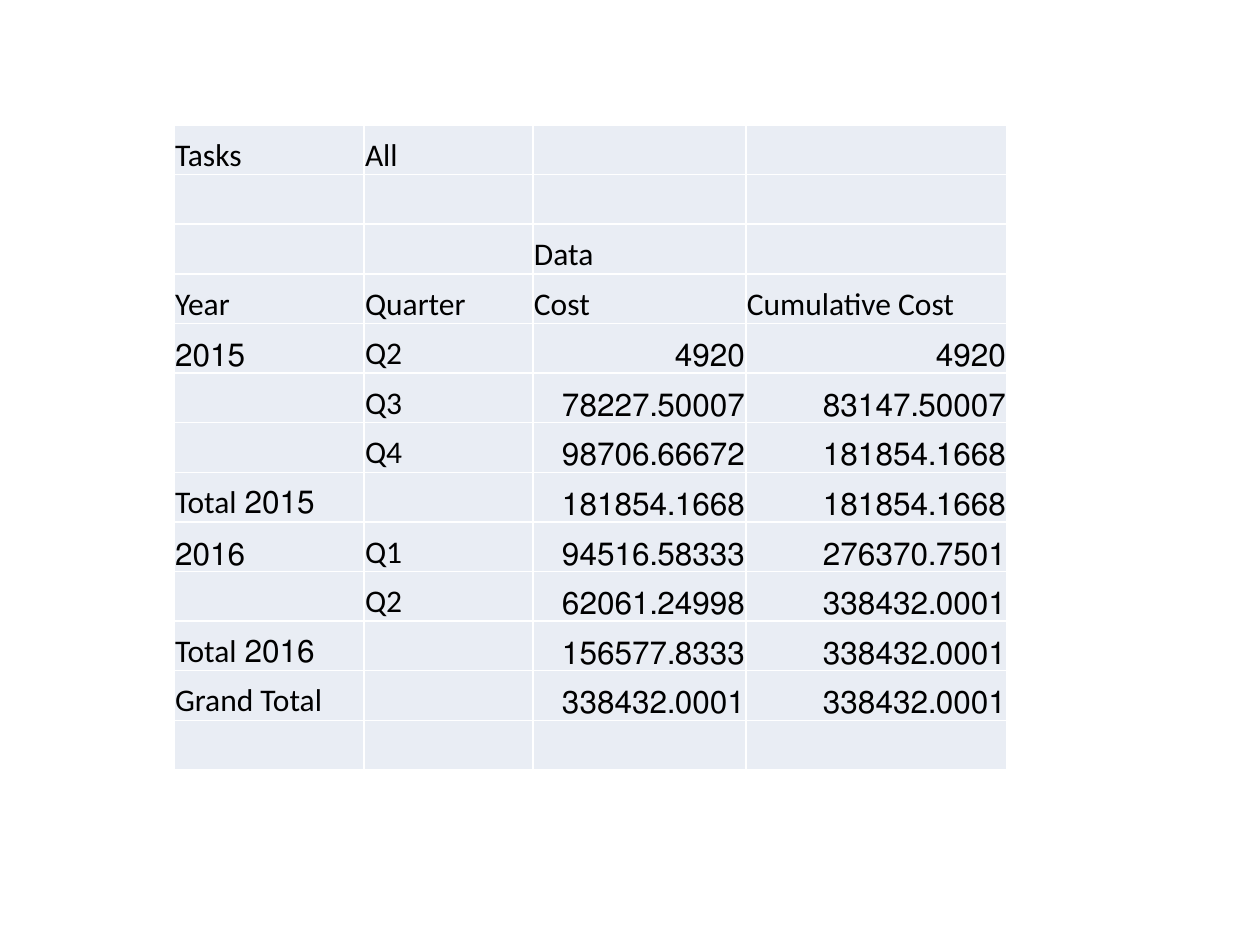
from lxml.etree import SubElement
from pptx import Presentation
from pptx.dml.color import RGBColor as Rgb
from pptx.enum.text import MSO_ANCHOR as Anchor, PP_ALIGN as Align
from pptx.oxml.ns import qn
from pptx.util import Pt

PX = 914400 // 126
HUES = {"text": "000000", "cell": "E9EDF4", "rule": "FFFFFF"}
COLS = [190, 169, 213, 261]
ROWS = [
    ["Tasks", "All", "", ""],
    ["", "", "", ""],
    ["", "", "Data", ""],
    ["Year", "Quarter", "Cost", "Cumulative Cost"],
    ["2015", "Q2", "4920", "4920"],
    ["", "Q3", "78227.50007", "83147.50007"],
    ["", "Q4", "98706.66672", "181854.1668"],
    ["2015 Total", "", "181854.1668", "181854.1668"],
    ["2016", "Q1", "94516.58333", "276370.7501"],
    ["", "Q2", "62061.24998", "338432.0001"],
    ["2016 Total", "", "156577.8333", "338432.0001"],
    ["Grand Total", "", "338432.0001", "338432.0001"],
    ["", "", "", ""],
]


def edge(cell):
    """Rule all four sides of a cell."""
    props = cell._tc.get_or_add_tcPr()
    for side in ("lnL", "lnR", "lnT", "lnB"):
        line = SubElement(props, qn(f"a:{side}"), w=str(Pt(1)))
        fill = SubElement(line, qn("a:solidFill"))
        SubElement(fill, qn("a:srgbClr"), val=HUES["rule"])


def write(cell, text, align):
    """Style a cell and set its right-to-left text."""
    edge(cell)
    cell.fill.solid()
    cell.fill.fore_color.rgb = Rgb.from_string(HUES["cell"])
    cell.margin_left = cell.margin_right = cell.margin_top = PX
    cell.margin_bottom = 0
    cell.vertical_anchor = Anchor.BOTTOM
    cell.text_frame.text = text
    para = cell.text_frame.paragraphs[0]
    para.alignment = align
    para._p.get_or_add_pPr().set("rtl", "1")
    for run in para.runs:
        run.font.name = "Calibri"
        run.font.size = Pt(18)
        run.font.color.rgb = Rgb.from_string(HUES["text"])


def costs(slide, left, top, width, height):
    """Place the quarterly cost table in the given box."""
    box = [n * PX for n in (left, top, width, height)]
    table = slide.shapes.add_table(len(ROWS), len(COLS), *box).table
    table.first_row = table.horz_banding = False
    for col, wide in zip(table.columns, COLS):
        col.width = wide * PX
    for r, row in enumerate(ROWS):
        for c, text in enumerate(row):
            right = c > 1 and text[:1].isdigit()
            write(table.cell(r, c), text, Align.RIGHT if right else Align.LEFT)


def main():
    """Build and save the slide."""
    deck = Presentation()
    deck.slide_width, deck.slide_height = 1260 * PX, 945 * PX
    slide = deck.slides.add_slide(deck.slide_layouts[6])
    costs(slide, 174, 125, sum(COLS), 645)
    deck.save("out.pptx")


if __name__ == "__main__":
    main()
